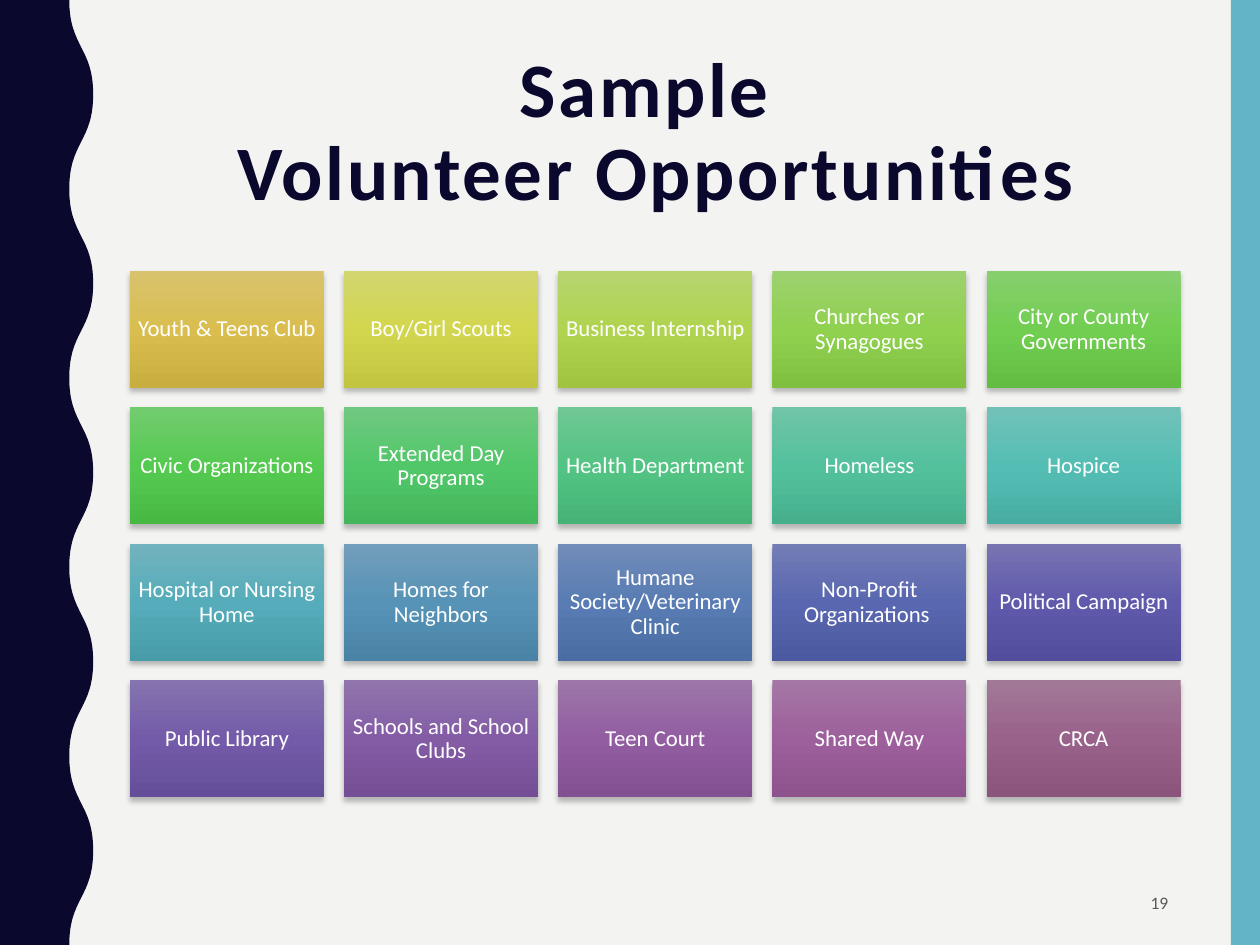
from copy import deepcopy

from lxml.etree import SubElement
from pptx import Presentation
from pptx.dml.color import RGBColor
from pptx.enum.shapes import MSO_SHAPE
from pptx.enum.text import MSO_ANCHOR, PP_ALIGN
from pptx.oxml.ns import qn
from pptx.util import Inches, Pt

NAVY, TEAL, PAPER, WHITE, GRAY = "0B082E", "62B4C6", "F3F3F2", "FFFFFF", "595959"
COLS, LEFT, TOP, WIDE, HIGH = 5, 1.03, 2.15, 1.54, 0.93
STEP_X = 1.7
STEP_Y = (5.4 - TOP) / 3

# Label, then top, middle and bottom colours
TILES = [
    ("Youth & Teens Club", "D9C26E", "D9BE4F", "C8AD3F"),
    ("Boy/Girl Scouts", "D2D66E", "D2D64F", "C1C53F"),
    ("Business Internship", "B7D46F", "B0D450", "A0C340"),
    ("Churches or Synagogues", "9DD16F", "90D150", "80C041"),
    ("City or County Governments", "86CF6F", "72CE51", "62BD42"),
    ("Civic Organizations", "72CC6F", "55CA51", "47B943"),
    ("Extended Day Programs", "70C980", "52C76A", "44B65B"),
    ("Health Department", "70C793", "53C484", "45B375"),
    ("Homeless", "70C4A7", "54C19D", "46B08D"),
    ("Hospice", "71C1B9", "55BEB4", "47ADA3"),
    ("Hospital or Nursing Home", "71B3BE", "56ACBA", "489CAA"),
    ("Homes for Neighbors", "729EBB", "5793B7", "4984A6"),
    ("Humane Society/Veterinary Clinic", "728CB8", "587CB3", "4A6DA3"),
    ("Non-Profit Organizations ", "737DB5", "5967B0", "4B59A0"),
    ("Political Campaign", "7874B2", "605AAC", "524D9C"),
    ("Public Library", "8574AF", "735BA9", "654E99"),
    ("Schools and School Clubs", "9275AC", "835CA5", "754F96"),
    ("Teen Court", "9D76A9", "925EA1", "835092"),
    ("Shared Way", "A577A5", "9D609C", "8E528D"),
    ("CRCA", "A27897", "99628B", "8A547D"),
]


def color(code):
    return RGBColor.from_string(code)


def paint(shape, code):
    shape.shadow.inherit = False
    shape.fill.solid()
    shape.fill.fore_color.rgb = color(code)
    shape.line.fill.background()


def write(shape, text, size, code, align=PP_ALIGN.CENTER, lines=0.9,
          bold=False, space=0, inset=None):
    frame = shape.text_frame
    frame.text = text
    frame.word_wrap = True
    frame.vertical_anchor = MSO_ANCHOR.MIDDLE
    if inset is not None:
        for side in ("left", "top", "right", "bottom"):
            setattr(frame, f"margin_{side}", Inches(inset))
    para = frame.paragraphs[0]
    para.alignment = align
    para.line_spacing = lines
    look = {"name": "Calibri", "size": Pt(size), "bold": bold}
    for run in para.runs:
        for key, value in look.items():
            setattr(run.font, key, value)
        run.font.color.rgb = color(code)
        if space:
            run.font._element.set("spc", str(int(space * 100)))


def add_text(slide, box, text, size, code, **form):
    write(slide.shapes.add_textbox(*map(Inches, box)), text, size, code, **form)


def add_rect(slide, box):
    return slide.shapes.add_shape(MSO_SHAPE.RECTANGLE, *map(Inches, box))


def add_wave(slide, near=0.55, far=0.74, half=0.75, count=10):
    """Side band whose right edge swings between near and far."""
    knots = [(Inches(far if i % 2 else near), Inches(i * half))
             for i in range(count + 1)]
    pen = slide.shapes.build_freeform(*knots[0])
    pen.add_line_segments([*knots[1:], (0, Inches(count * half)), (0, 0)])
    band = pen.convert_to_shape()
    paint(band, NAVY)
    # Bend the straight swings into curves
    sides = list(band._element.spPr.iter(qn("a:lnTo")))
    for side, (x1, y1), (x2, y2) in zip(sides, knots, knots[1:]):
        mid = (y1 + y2) // 2
        curve = side.getparent().makeelement(qn("a:cubicBezTo"))
        for x, y in ((x1, mid), (x2, mid), (x2, y2)):
            SubElement(curve, qn("a:pt"), x=str(x), y=str(y))
        side.getparent().replace(side, curve)


def shade(shape, codes):
    """Three-stop gradient from top to bottom."""
    fill = shape.fill
    fill.gradient()
    fill.gradient_angle = 270
    stops = shape._element.spPr.find(qn("a:gradFill")).find(qn("a:gsLst"))
    stops.append(deepcopy(stops[0]))
    for stop, place, code in zip(fill.gradient_stops, (0, 0.5, 1), codes):
        stop.position = place
        stop.color.rgb = color(code)


def add_shadow(shape):
    shape.shadow.inherit = False
    group = shape._element.spPr.find(qn("a:effectLst"))
    cast = SubElement(group, qn("a:outerShdw"), blurRad=str(Pt(3)),
                      dist=str(Pt(2)), dir="5400000", rotWithShape="0")
    tone = SubElement(cast, qn("a:srgbClr"), val="000000")
    SubElement(tone, qn("a:alpha"), val="25000")


def add_tile(slide, index, label, *codes):
    row, col = divmod(index, COLS)
    tile = add_rect(slide, (LEFT + col * STEP_X, TOP + row * STEP_Y, WIDE, HIGH))
    tile.line.fill.background()
    shade(tile, codes)
    add_shadow(tile)
    write(tile, label, 13, WHITE, inset=0.05)


def main():
    deck = Presentation()
    deck.slide_width, deck.slide_height = Inches(10), Inches(7.5)
    slide = deck.slides.add_slide(deck.slide_layouts[6])

    # Background and side bands
    slide.background.fill.solid()
    slide.background.fill.fore_color.rgb = color(PAPER)
    paint(add_rect(slide, (9.77, 0, 0.23, 7.5)), TEAL)
    add_wave(slide)

    # Title
    add_text(slide, (LEFT, 0.25, 8.35, 1.63), "Sample \vVolunteer Opportunities",
             44, NAVY, bold=True, space=1.5)

    # Tile grid
    for index, tile in enumerate(TILES):
        add_tile(slide, index, *tile)

    # Slide number
    add_text(slide, (7.06, 6.97, 2.31, 0.38), "19", 10, GRAY,
             align=PP_ALIGN.RIGHT, lines=1.0)

    deck.save("out.pptx")


if __name__ == "__main__":
    main()
